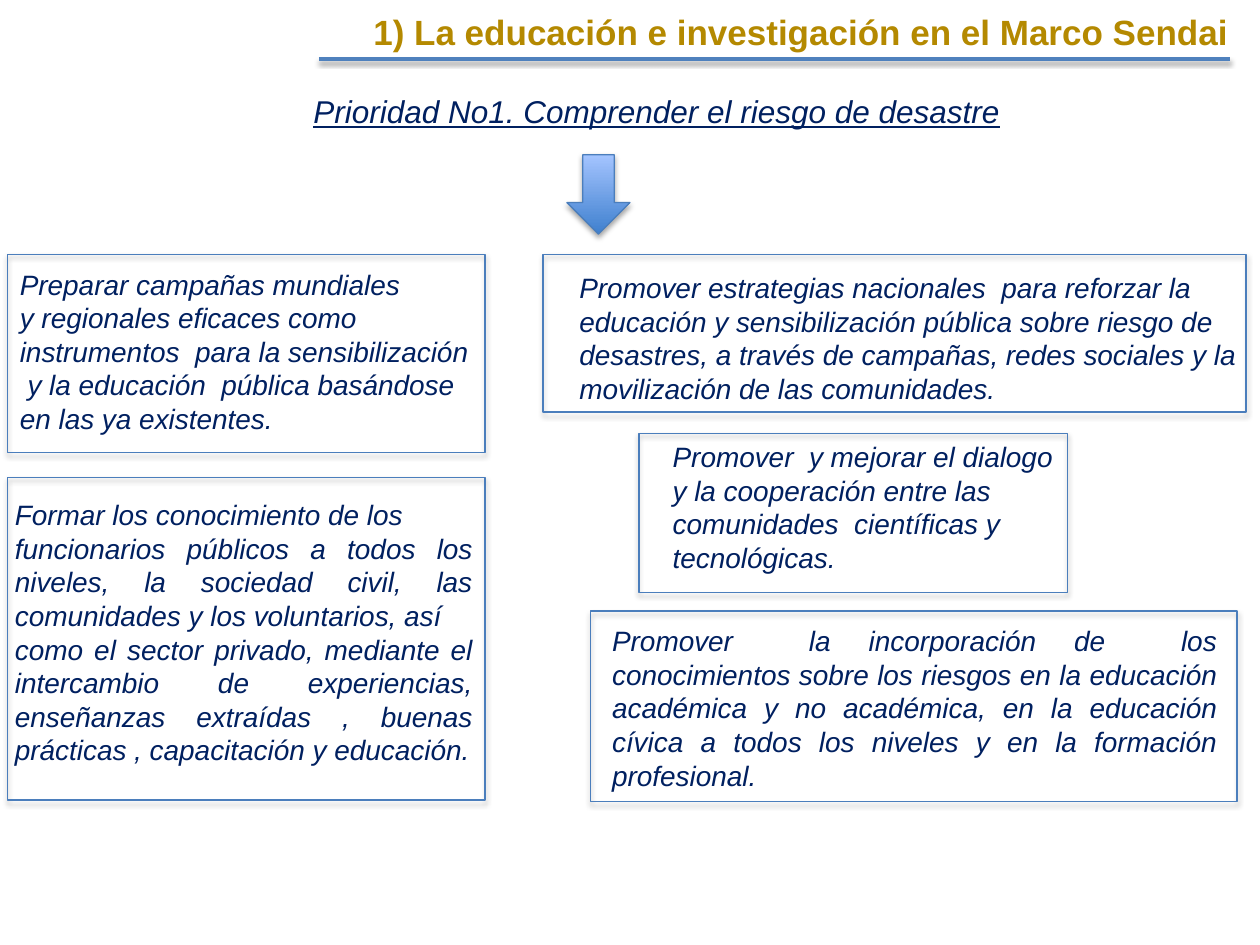
from lxml import etree
from pptx import Presentation
from pptx import util as u
from pptx.dml.color import RGBColor
from pptx.enum import shapes, text
from pptx.oxml import ns

COLORS = {
    "title": "B48900",
    "body": "002060",
    "outline": "4B7EBC",
    "rule": "4F81BD",
    "arrow_low": "3F80CE",
    "arrow_high": "A4C4FF",
    "shadow": "000000",
}
FONT = "Arial"
LEFT = text.PP_ALIGN.LEFT
CENTER = text.PP_ALIGN.CENTER
JUSTIFY = text.PP_ALIGN.JUSTIFY

CARDS = [
    ((0.15, 9.63, 9.63, 6.5), (0.05, 9.91, 9.73, 5.74), JUSTIFY, True, [
        "Formar los conocimiento de los",
        "funcionarios públicos a todos los niveles, la sociedad civil, "
        "las comunidades y los voluntarios, así",
        "como el sector privado, mediante el intercambio de experiencias, "
        "enseñanzas extraídas , buenas prácticas , capacitación y educación.",
    ]),
    ((12.88, 8.74, 8.64, 3.2), (13.31, 8.74, 8.43, 3), JUSTIFY, False, [
        "Promover  y mejorar el dialogo",
        "y la cooperación entre las",
        "comunidades  científicas y",
        "tecnológicas.",
    ]),
    ((11.91, 12.32, 13.03, 3.84), (12.09, 12.45, 12.7, 3.68), JUSTIFY, True, [
        "Promover  la incorporación de  los conocimientos sobre los riesgos "
        "en la educación académica y no académica, en la educación cívica "
        "a todos los niveles y en la formación profesional.",
    ]),
    ((10.95, 5.13, 14.17, 3.18), (11.43, 5.33, 14.07, 3), LEFT, False, [
        "Promover estrategias nacionales  para reforzar la",
        "educación y sensibilización pública sobre riesgo de",
        "desastres, a través de campañas, redes sociales y la",
        "movilización de las comunidades.",
    ]),
    ((0.15, 5.13, 9.63, 3.99), (0.15, 5.26, 9.63, 3.68), LEFT, True, [
        "Preparar campañas mundiales",
        "y regionales eficaces como",
        "instrumentos  para la sensibilización  y la educación  pública basándose",
        "en las ya existentes.",
    ]),
]


def color(name):
    return RGBColor.from_string(COLORS[name])


def lengths(values):
    return [u.Cm(value) for value in values]


def add_shadow(element, distance, alpha):
    effects = etree.SubElement(element._element.spPr, ns.qn("a:effectLst"))
    shadow = etree.SubElement(
        effects, ns.qn("a:outerShdw"), blurRad=str(u.Pt(3.1)),
        dist=str(u.Pt(distance)), dir="5400000", rotWithShape="0")
    tint = etree.SubElement(shadow, ns.qn("a:srgbClr"), val=COLORS["shadow"])
    etree.SubElement(tint, ns.qn("a:alpha"), val=str(alpha * 1000))


def add_outlined(page, kind, place):
    shape = page.shapes.add_shape(kind, *lengths(place))
    shape.fill.background()
    shape.line.color.rgb = color("outline")
    shape.line.width = u.Pt(0.75)
    add_shadow(shape, 1.8, 35)
    return shape


def add_text(page, place, lines, size=16, tone="body", align=LEFT, wrap=True,
             bold=False, italic=True, underline=False):
    box = page.shapes.add_textbox(*lengths(place))
    frame = box.text_frame
    frame.word_wrap = wrap
    frame.auto_size = text.MSO_AUTO_SIZE.SHAPE_TO_FIT_TEXT
    for index, line in enumerate(lines):
        para = frame.add_paragraph() if index else frame.paragraphs[0]
        para.alignment = align
        span = para.add_run()
        span.text = line
        font = span.font
        font.name, font.size = FONT, u.Pt(size)
        font.bold, font.italic, font.underline = bold, italic, underline
        font.color.rgb = color(tone)


def add_arrow(page, place):
    arrow = add_outlined(page, shapes.MSO_SHAPE.DOWN_ARROW, place)
    arrow.fill.gradient()
    arrow.fill.gradient_angle = 90
    stops = arrow.fill.gradient_stops
    for stop, position, name in zip(stops, (0, 1), ("arrow_low", "arrow_high")):
        stop.position = position
        stop.color.rgb = color(name)


def add_rule(page, start, end):
    rule = page.shapes.add_connector(
        shapes.MSO_CONNECTOR.STRAIGHT, *lengths(start + end))
    rule.line.color.rgb = color("rule")
    rule.line.width = u.Pt(2)
    add_shadow(rule, 1.6, 38)


def main():
    deck = Presentation()
    deck.slide_width, deck.slide_height = lengths((25.4, 19.05))
    page = deck.slides.add_slide(deck.slide_layouts[6])
    add_text(page, (7.21, 0.08, 17.88, 1.12),
             ["1) La educación e investigación en el Marco Sendai"],
             size=20, tone="title", align=CENTER, wrap=False,
             bold=True, italic=False)
    for frame, place, align, wrap, lines in CARDS:
        add_outlined(page, shapes.MSO_SHAPE.RECTANGLE, frame)
        add_text(page, place, lines, align=align, wrap=wrap)
    add_text(page, (6.07, 1.73, 14.48, 1.02),
             ["Prioridad No1. Comprender el riesgo de desastre"],
             size=18, wrap=False, underline=True)
    add_arrow(page, (11.43, 3.12, 1.27, 1.6))
    add_rule(page, (6.43, 1.19), (24.79, 1.19))
    deck.save("out.pptx")


if __name__ == "__main__":
    main()
